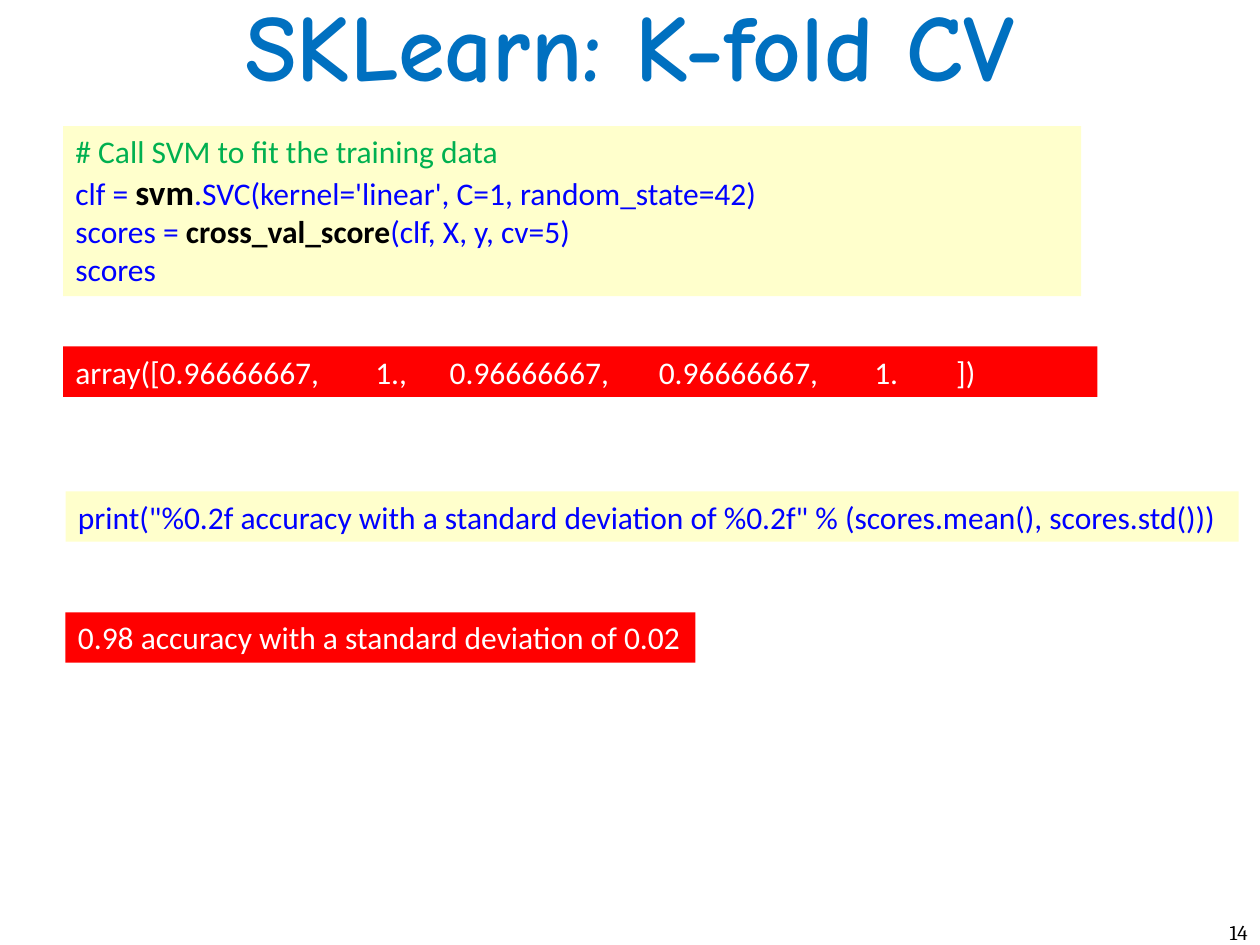
from lxml.etree import SubElement
from pptx import Presentation
from pptx.dml.color import RGBColor
from pptx.enum.shapes import MSO_SHAPE
from pptx.enum.text import MSO_ANCHOR, PP_ALIGN
from pptx.oxml.ns import qn
from pptx.util import Inches, Pt

SKY = RGBColor(0x00, 0x70, 0xC0)
BLUE = RGBColor(0x00, 0x00, 0xFF)
GREEN = RGBColor(0x00, 0xB0, 0x50)
BLACK = RGBColor(0x00, 0x00, 0x00)
WHITE = RGBColor(0xFF, 0xFF, 0xFF)
CREAM = RGBColor(0xFF, 0xFF, 0xCC)
RED = RGBColor(0xFF, 0x00, 0x00)


def add_run(para, text, size=18, font="Calibri", color=BLUE, bold=False):
    run = para.add_run()
    run.text = text
    run.font.size = Pt(size)
    run.font.name = font
    run.font.color.rgb = color
    run.font.bold = bold


def add_label(slide, box, text, align, anchor=MSO_ANCHOR.TOP, space=1.0, **style):
    frame = slide.shapes.add_textbox(*map(Inches, box)).text_frame
    frame.word_wrap = True
    frame.vertical_anchor = anchor
    para = frame.paragraphs[0]
    para.alignment = align
    para.line_spacing = space
    add_run(para, text, **style)


def add_panel(slide, box, fill, lines):
    panel = slide.shapes.add_shape(MSO_SHAPE.RECTANGLE, *map(Inches, box))
    panel.shadow.inherit = False
    panel.fill.solid()
    panel.fill.fore_color.rgb = fill
    panel.line.fill.background()
    frame = panel.text_frame
    frame.word_wrap = True
    frame.vertical_anchor = MSO_ANCHOR.TOP
    for index, line in enumerate(lines):
        para = frame.add_paragraph() if index else frame.paragraphs[0]
        para.alignment = PP_ALIGN.LEFT
        for text, style in line:
            add_run(para, text, **style)
    return panel


def set_tabs(para, stops):
    tabs = SubElement(para._p.get_or_add_pPr(), qn("a:tabLst"))
    for stop in stops:
        SubElement(tabs, qn("a:tab"), pos=str(Inches(stop)), algn="l")


def main():
    deck = Presentation()
    deck.slide_width, deck.slide_height = Inches(10), Inches(7.5)
    slide = deck.slides.add_slide(deck.slide_layouts[6])

    add_label(slide, (0, 0, 10, 0.81), "SKLearn: K-fold CV", PP_ALIGN.CENTER,
              anchor=MSO_ANCHOR.MIDDLE, space=0.9,
              size=54, font="Comic Neue", color=SKY, bold=True)
    add_label(slide, (9.25, 7.25, 0.75, 0.25), "14", PP_ALIGN.RIGHT,
              size=12, font="Cambria", color=BLACK)

    code = {"color": BLUE}
    strong = {"color": BLACK, "bold": True}
    output = {"color": WHITE}
    add_panel(slide, (0.5, 1, 8.08, 1.35), CREAM, [
        [("# Call SVM to fit the training data", {"color": GREEN})],
        [("clf = ", code), ("svm", {**strong, "size": 20}),
         (".SVC(kernel='linear', C=1, random_state=42)", code)],
        [("scores = ", code), ("cross_val_score", strong),
         ("(clf, X, y, cv=5)", code)],
        [("scores", code)],
    ])
    scores = ["array([0.96666667,", "1.,", "0.96666667,", "0.96666667,", "1.", "])"]
    result = add_panel(slide, (0.5, 2.75, 8.21, 0.4), RED,
                       [[("\t".join(scores), output)]])
    set_tabs(result.text_frame.paragraphs[0], (2.38, 2.97, 4.63, 6.34, 6.99))
    add_panel(slide, (0.52, 3.9, 9.31, 0.4), CREAM, [[(
        'print("%0.2f accuracy with a standard deviation of %0.2f"'
        " % (scores.mean(), scores.std()))", code)]])
    add_panel(slide, (0.52, 4.86, 5, 0.4), RED,
              [[("0.98 accuracy with a standard deviation of 0.02", output)]])

    deck.save("out.pptx")


if __name__ == "__main__":
    main()
